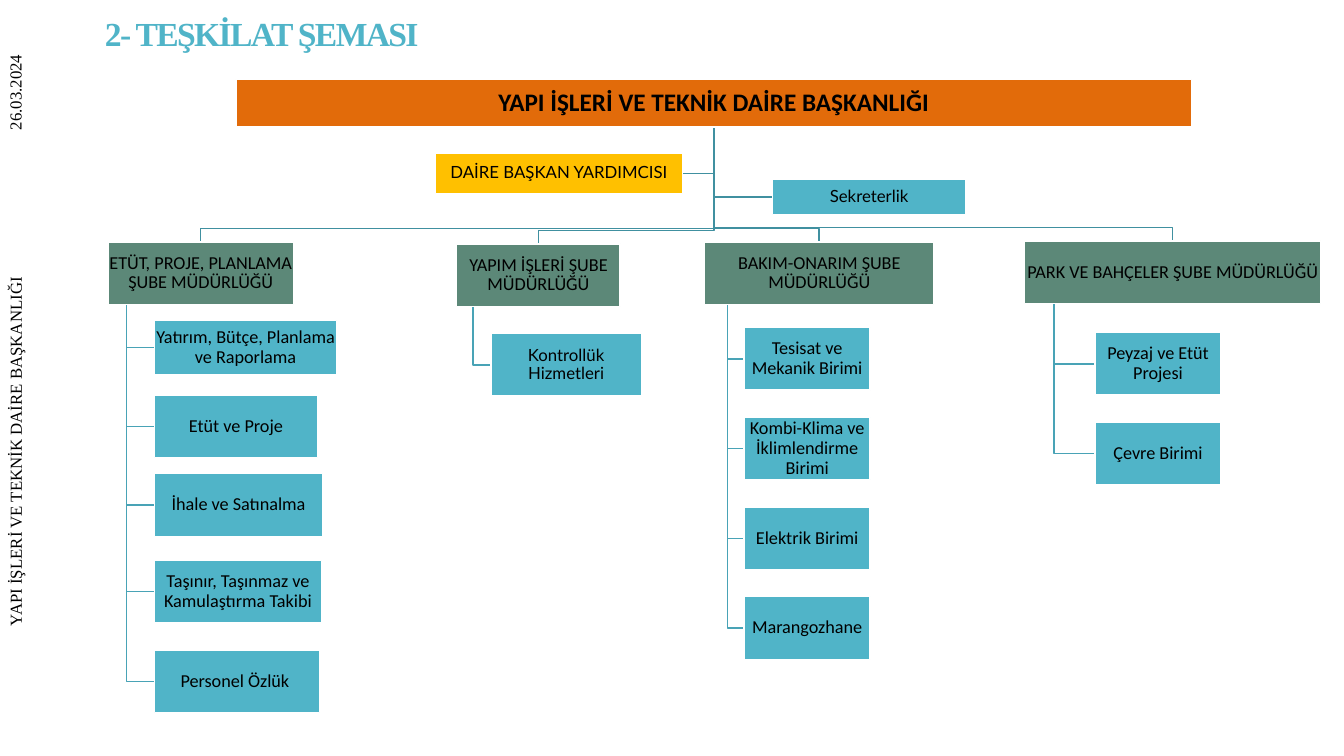
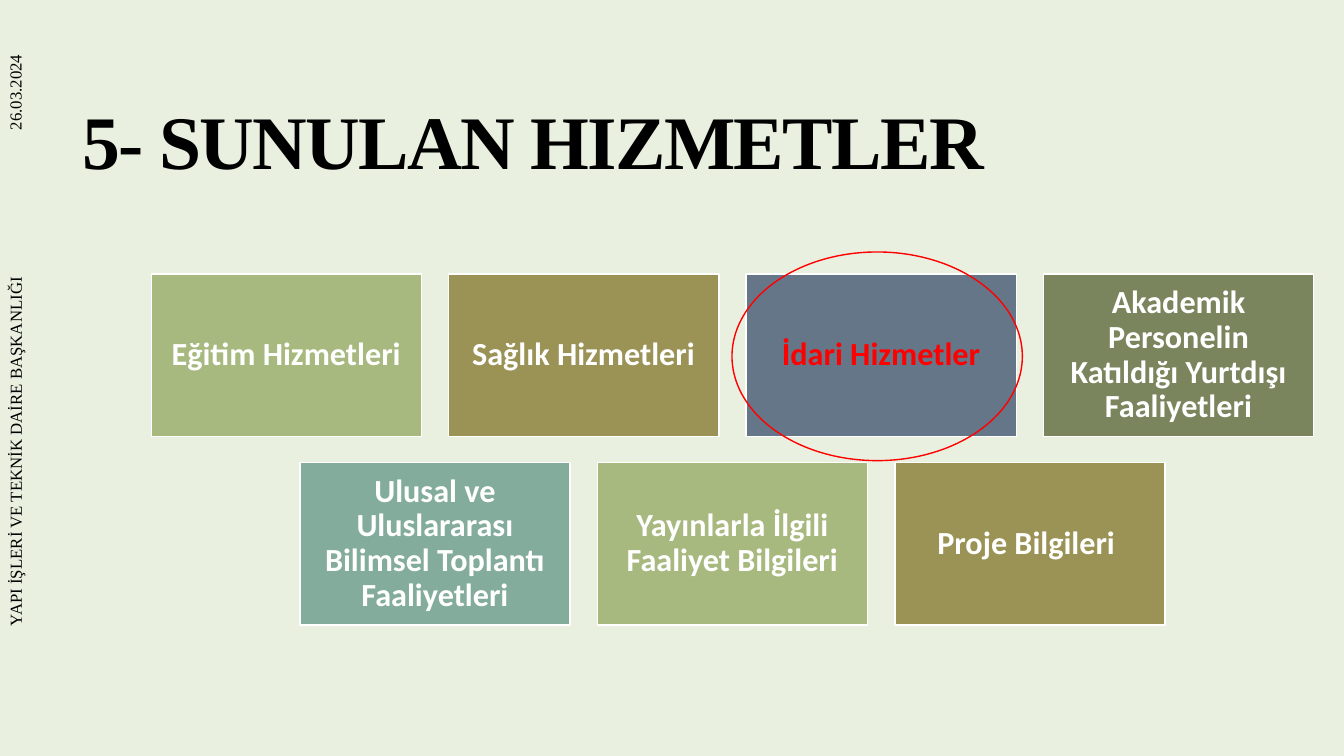
import pptx
import pptx.dml.color
import pptx.enum.shapes
import pptx.enum.text
import pptx.util

Inches = pptx.util.Inches
Pt = pptx.util.Pt
RGBColor = pptx.dml.color.RGBColor
MSO_SHAPE = pptx.enum.shapes.MSO_SHAPE
MSO_ANCHOR = pptx.enum.text.MSO_ANCHOR
PP_ALIGN = pptx.enum.text.PP_ALIGN

BLACK = RGBColor(0x00, 0x00, 0x00)
WHITE = RGBColor(0xFF, 0xFF, 0xFF)
RED = RGBColor(0xFF, 0x00, 0x00)
PALE_GREEN = RGBColor(0xEA, 0xF0, 0xE0)
TURQUOISE = RGBColor(0x50, 0xB4, 0xC8)
ORANGE = RGBColor(0xE2, 0x6B, 0x0A)
YELLOW = RGBColor(0xFF, 0xC0, 0x00)
DARK_GREEN = RGBColor(0x5C, 0x88, 0x78)
TRUNK_TEAL = RGBColor(0x40, 0x90, 0xA0)
UNIT_TEAL = RGBColor(0x49, 0xA3, 0xB6)
SAGE = RGBColor(0xA8, 0xB9, 0x7F)
OLIVE = RGBColor(0x9B, 0x92, 0x56)
SLATE = RGBColor(0x65, 0x76, 0x89)
MOSS = RGBColor(0x7A, 0x85, 0x5D)
SEA_GREEN = RGBColor(0x84, 0xAC, 0x9D)

DEPARTMENT = "YAPI İŞLERİ VE TEKNİK DAİRE BAŞKANLIĞI"
SIDE_TEXTS = [
    ("26.03.2024", -0.55, 0.4, 1.54, 0.44),
    (DEPARTMENT, -2.2, 3.86, 4.65, 0.25),
]
BRANCH_HEIGHT = 0.62
UNIT_HEIGHT = 0.62
UNIT_PITCH = 0.89


class SlideWriter:
    SERIF = "Times New Roman"
    SANS = "Calibri"

    def __init__(self):
        self.deck = pptx.Presentation()
        self.deck.slide_width = Inches(13.33)
        self.deck.slide_height = Inches(7.5)
        self.slide = None

    def start_slide(self, background):
        title_only = self.deck.slide_layouts[5]
        self.slide = self.deck.slides.add_slide(title_only)
        fill = self.slide.background.fill
        fill.solid()
        fill.fore_color.rgb = background
        for side_text in SIDE_TEXTS:
            self.side_text(*side_text)

    def style(self, para, font, size, color, bold=False):
        for span in para.runs:
            span.font.name = font
            span.font.size = Pt(size)
            span.font.bold = bold
            span.font.color.rgb = color

    def side_text(self, text, left, top, width, height):
        box = self.slide.shapes.add_textbox(
            Inches(left), Inches(top), Inches(width), Inches(height))
        box.rotation = 270
        box.text_frame.word_wrap = True
        box.text_frame.text = text
        self.style(box.text_frame.paragraphs[0], self.SERIF, 12, BLACK)

    def title(self, text, left, top, width, height, size, color):
        box = self.slide.shapes.title
        box.left, box.top = Inches(left), Inches(top)
        box.width, box.height = Inches(width), Inches(height)
        frame = box.text_frame
        frame.text = text
        frame.vertical_anchor = MSO_ANCHOR.MIDDLE
        frame.auto_size = pptx.enum.text.MSO_AUTO_SIZE.NONE
        para = frame.paragraphs[0]
        para.alignment = PP_ALIGN.LEFT
        para.line_spacing = 0.85
        self.style(para, self.SERIF, size, color, bold=True)
        for span in para.runs:
            span.font._element.set("spc", "-120")

    def box(self, text, left, top, width, height, fill, size=13,
            color=BLACK, bold=False, font=SANS, inset=0.01):
        box = self.slide.shapes.add_shape(
            MSO_SHAPE.RECTANGLE,
            Inches(left), Inches(top), Inches(width), Inches(height))
        box.shadow.inherit = False
        box.fill.solid()
        box.fill.fore_color.rgb = fill
        box.line.color.rgb = WHITE
        box.line.width = Pt(1)
        frame = box.text_frame
        frame.word_wrap = True
        frame.vertical_anchor = MSO_ANCHOR.MIDDLE
        frame.margin_left = frame.margin_right = Inches(inset)
        frame.margin_top = frame.margin_bottom = Inches(inset)
        frame.text = text
        para = frame.paragraphs[0]
        para.alignment = PP_ALIGN.CENTER
        para.line_spacing = 0.9
        self.style(para, font, size, color, bold)

    def outline(self, shape, color):
        shape.shadow.inherit = False
        shape.fill.background()
        shape.line.color.rgb = color
        shape.line.width = Pt(1)

    def link(self, points, color):
        """Draw an open, right-angled line through the points, in inches."""
        start, *corners = [(Inches(x), Inches(y)) for x, y in points]
        builder = self.slide.shapes.build_freeform(*start)
        builder.add_line_segments(corners, close=False)
        self.outline(builder.convert_to_shape(), color)

    def ring(self, left, top, width, height, color):
        ring = self.slide.shapes.add_shape(
            MSO_SHAPE.OVAL,
            Inches(left), Inches(top), Inches(width), Inches(height))
        self.outline(ring, color)


def stack(texts, top, width):
    """Give equally spaced units as (text, top, width, height)."""
    return [(text, top + i * UNIT_PITCH, width, UNIT_HEIGHT)
            for i, text in enumerate(texts)]


def organisation_slide(writer):
    writer.start_slide(WHITE)
    writer.title("2- TEŞKİLAT ŞEMASI", 0.94, 0.11, 10.5, 0.5, 24, TURQUOISE)

    root_left, root_top, root_width, root_height = 2.34, 0.79, 9.48, 0.47
    trunk_x = root_left + root_width / 2
    trunk_y = root_top + root_height

    # Branch: text, left, top, width, left of its units, units, unit font
    branches = [
        ("ETÜT, PROJE, PLANLAMA ŞUBE MÜDÜRLÜĞÜ", 1.07, 2.4, 1.84, 1.53, [
            ("Yatırım, Bütçe, Planlama ve Raporlama", 3.18, 1.81, 0.54),
            ("Etüt ve Proje", 3.92, 1.62, UNIT_HEIGHT),
            ("İhale ve Satınalma", 4.7, 1.67, UNIT_HEIGHT),
            ("Taşınır, Taşınmaz ve Kamulaştırma Takibi",
             5.56, 1.66, UNIT_HEIGHT),
            ("Personel Özlük ", 6.45, 1.64, UNIT_HEIGHT),
        ], {}),
        ("YAPIM İŞLERİ ŞUBE MÜDÜRLÜĞÜ", 4.53, 2.42, 1.62, 4.87,
         stack(["Kontrollük Hizmetleri"], 3.31, 1.49),
         {"font": "Lato", "size": 12}),
        ("BAKIM-ONARIM ŞUBE MÜDÜRLÜĞÜ", 6.99, 2.4, 2.27, 7.38,
         stack(["Tesisat ve Mekanik Birimi",
                "Kombi-Klima ve İklimlendirme Birimi",
                "Elektrik Birimi", "Marangozhane"], 3.25, 1.25), {}),
        ("PARK VE BAHÇELER ŞUBE MÜDÜRLÜĞÜ", 10.16, 2.39, 2.94, 10.86,
         stack(["Peyzaj ve Etüt Projesi", "Çevre Birimi"], 3.3, 1.25), {}),
    ]
    for text, left, top, width, unit_left, units, unit_font in branches:
        middle, bend_y = left + width / 2, top - 0.13
        writer.link([(trunk_x, trunk_y), (trunk_x, bend_y),
                     (middle, bend_y), (middle, top)], TRUNK_TEAL)
        stem_x, stem_y = left + width / 10, top + BRANCH_HEIGHT
        for unit, unit_top, unit_width, unit_height in units:
            unit_y = unit_top + unit_height / 2
            writer.link([(stem_x, stem_y), (stem_x, unit_y),
                         (unit_left, unit_y)], UNIT_TEAL)
            writer.box(unit, unit_left, unit_top, unit_width, unit_height,
                       TURQUOISE, **unit_font)
        writer.box(text, left, top, width, BRANCH_HEIGHT, DARK_GREEN)

    # Assistant: text, left, top, width, height, fill, end of its link
    assistants = [
        ("DAİRE BAŞKAN YARDIMCISI", 4.32, 1.52, 2.45, 0.4, YELLOW, 6.77),
        ("Sekreterlik", 7.66, 1.78, 1.92, 0.35, TURQUOISE, 7.66),
    ]
    for text, left, top, width, height, fill, link_x in assistants:
        middle = top + height / 2
        writer.link([(trunk_x, trunk_y), (trunk_x, middle),
                     (link_x, middle)], TRUNK_TEAL)
        writer.box(text, left, top, width, height, fill, 12, font="Lato")

    writer.box(DEPARTMENT, root_left, root_top, root_width, root_height,
               ORANGE, 18, bold=True)


def services_slide(writer):
    writer.start_slide(PALE_GREEN)
    writer.title("5- SUNULAN HIZMETLER", 0.72, 0.55, 11.78, 1.81, 54, BLACK)

    left, top, pitch_x, pitch_y = 1.5, 2.72, 2.95, 1.87
    rows = [
        [("Eğitim Hizmetleri", SAGE, WHITE),
         ("Sağlık Hizmetleri", OLIVE, WHITE),
         ("İdari Hizmetler", SLATE, RED),
         ("Akademik Personelin Katıldığı Yurtdışı Faaliyetleri",
          MOSS, WHITE)],
        [("Ulusal ve Uluslararası Bilimsel Toplantı Faaliyetleri",
          SEA_GREEN, WHITE),
         ("Yayınlarla İlgili Faaliyet Bilgileri", SAGE, WHITE),
         ("Proje Bilgileri ", OLIVE, WHITE)],
    ]
    for i, row in enumerate(rows):
        indent = (len(rows[0]) - len(row)) / 2
        for j, (text, fill, color) in enumerate(row):
            writer.box(text, left + (indent + j) * pitch_x, top + i * pitch_y,
                       2.68, 1.61, fill, 23, color, bold=True, inset=0.1)
    writer.ring(7.26, 2.5, 2.88, 2.07, RED)


def main():
    writer = SlideWriter()
    organisation_slide(writer)
    services_slide(writer)
    writer.deck.save("out.pptx")


if __name__ == "__main__":
    main()
